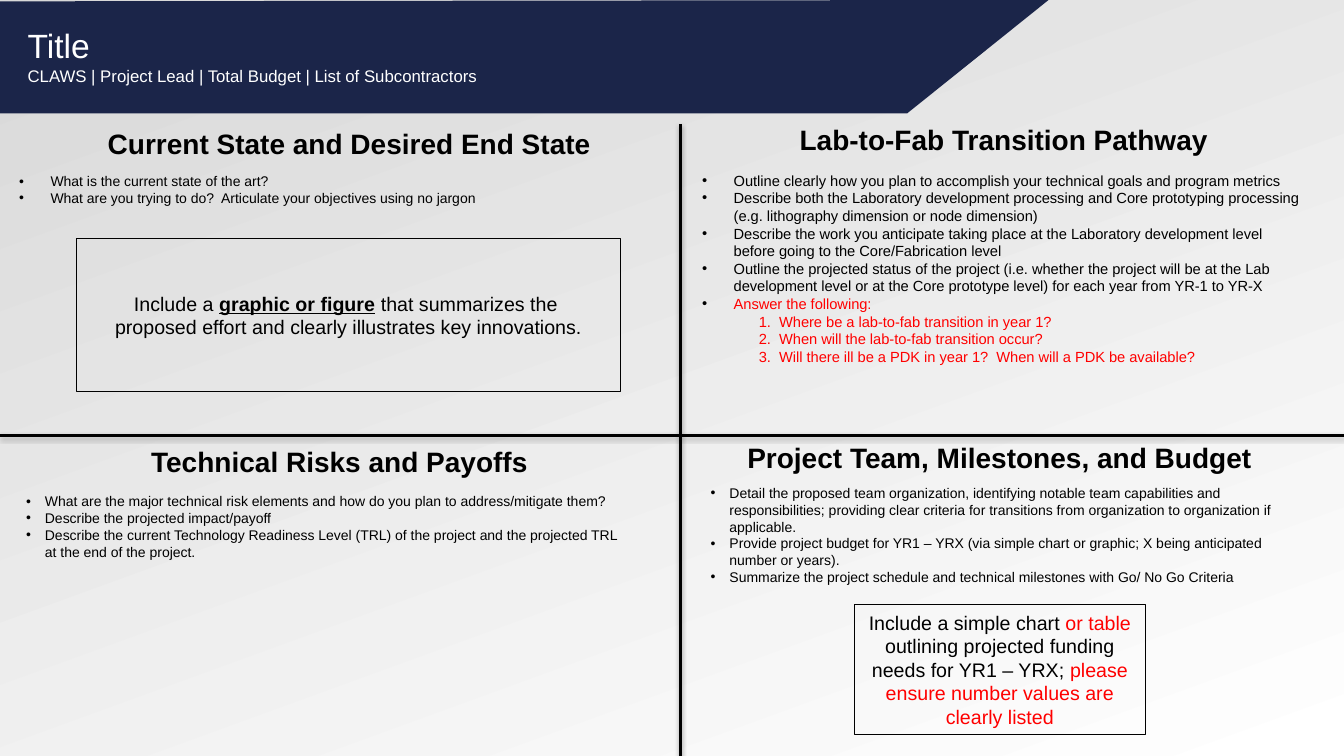
from lxml.etree import SubElement
from pptx import Presentation
from pptx.dml.color import RGBColor
from pptx.enum.shapes import MSO_CONNECTOR, MSO_SHAPE
from pptx.enum.text import MSO_ANCHOR, MSO_AUTO_SIZE, PP_ALIGN
from pptx.oxml.ns import qn
from pptx.util import Pt

BLACK, WHITE, RED, NAVY = "000000", "FFFFFF", "FF0000", "1B2549"
WIDE, HIGH, MID, CROSS, TOP = 960, 540, 486, 311, 88.5


def color(code):
    """Turn a hex string into a colour."""
    return RGBColor.from_string(code)


def node(base, tag, **attrs):
    """Add a drawing element with its attributes."""
    return SubElement(base, qn("a:" + tag), attrs)


def add_run(para, text, size, code=BLACK, bold=False, line=False):
    """Add one styled run to a paragraph."""
    run = para.add_run()
    run.text = text
    font = run.font
    font.name, font.size = "Arial", Pt(size)
    font.bold, font.underline = bold, line
    font.color.rgb = color(code)


def next_para(frame, first, align=PP_ALIGN.LEFT):
    """Give the first or a further paragraph of a frame."""
    para = frame.paragraphs[0] if first else frame.add_paragraph()
    para.alignment = align
    return para


def text_box(slide, box):
    """Add a wrapping text box and give its frame."""
    frame = slide.shapes.add_textbox(*map(Pt, box)).text_frame
    frame.word_wrap = True
    return frame


def backdrop(slide):
    """Fill the slide with a soft grey gradient."""
    fill = slide.background.fill
    fill.gradient()
    fill.gradient_angle = 110
    for stop, code, place in zip(fill.gradient_stops, (WHITE, "D8D8D8"), (0, 1)):
        stop.color.rgb = color(code)
        stop.position = place


def banner(slide, box, lines):
    """Draw the slanted banner and set the title on it."""
    left, top, width, height = box
    form = slide.shapes.build_freeform(Pt(left + width), Pt(top))
    form.add_line_segments([
        (Pt(left + width - 101), Pt(top + height)),
        (Pt(left), Pt(top + height)),
        (Pt(left), Pt(top + 1)),
    ], close=True)
    shape = form.convert_to_shape()
    shape.shadow.inherit = False
    shape.fill.solid()
    shape.fill.fore_color.rgb = color(NAVY)
    shape.line.fill.background()
    title = slide.shapes.title
    title.element.addprevious(shape.element)
    title.left, title.top = Pt(left + 12.5), Pt(top + 14.5)
    title.width, title.height = Pt(664), Pt(51)
    frame = title.text_frame
    frame.auto_size = MSO_AUTO_SIZE.NONE
    frame.vertical_anchor = MSO_ANCHOR.TOP
    for rank, (text, size) in enumerate(lines):
        add_run(next_para(frame, rank == 0), text, size, WHITE)


def rule(slide, start, end):
    """Draw a black dividing line with a soft shadow."""
    line = slide.shapes.add_connector(MSO_CONNECTOR.STRAIGHT, *map(Pt, start + end))
    line.line.color.rgb = color(BLACK)
    line.line.width = Pt(2)
    effects = node(line.element.spPr, "effectLst")
    shade = node(effects, "outerShdw", blurRad=str(Pt(3.1)), dist=str(Pt(1.6)),
                 dir="5400000", rotWithShape="0")
    node(node(shade, "srgbClr", val=BLACK), "alpha", val="38000")


def bullet(para, indent):
    """Give a paragraph a black hanging bullet."""
    props = para._p.get_or_add_pPr()
    props.set("marL", str(Pt(indent)))
    props.set("indent", str(-Pt(indent)))
    node(node(props, "buClr"), "srgbClr", val=BLACK)
    node(props, "buFont", typeface="Arial")
    node(props, "buChar", char="•")


def panel(slide, box, head, title, body, size, indent, items, steps=()):
    """Fill a quarter with a heading, bullets and red steps."""
    left, top = box
    x, y, width = head
    frame = text_box(slide, (left + x, top + y, width, 31.5))
    add_run(next_para(frame, True, PP_ALIGN.CENTER), title, 20, bold=True)
    x, y, width, height = body
    frame = text_box(slide, (left + x, top + y, width, height))
    for rank, item in enumerate(items):
        para = next_para(frame, rank == 0)
        bullet(para, indent)
        add_run(para, item, size, RED if steps and item == items[-1] else BLACK)
    for step in steps:
        para = next_para(frame, False)
        para.level = 1
        props = para._p.get_or_add_pPr()
        props.set("marL", str(Pt(40.5)))
        props.set("indent", "0")
        add_run(para, step, size, RED)


def callout(slide, box, paras):
    """Draw an outlined box with centred text."""
    shape = slide.shapes.add_shape(MSO_SHAPE.RECTANGLE, *map(Pt, box))
    shape.shadow.inherit = False
    shape.fill.background()
    shape.line.color.rgb = color(BLACK)
    shape.line.width = Pt(0.75)
    frame = shape.text_frame
    frame.word_wrap = True
    frame.vertical_anchor = MSO_ANCHOR.MIDDLE
    for rank, runs in enumerate(paras):
        para = next_para(frame, rank == 0, PP_ALIGN.CENTER)
        for text, code, strong in runs:
            add_run(para, text, 14, code, strong, strong)


def main():
    """Build the slide and save it."""
    deck = Presentation()
    deck.slide_width, deck.slide_height = Pt(WIDE), Pt(HIGH)
    slide = deck.slides.add_slide(deck.slide_layouts[5])
    backdrop(slide)
    banner(slide, (0, 0, 749, 81), [
        ("Title", 24),
        ("CLAWS | Project Lead | Total Budget | List of Subcontractors", 12),
    ])
    rule(slide, (MID, TOP), (MID, HIGH))
    rule(slide, (0, CROSS), (WIDE, CROSS))
    panel(slide, (0, TOP), (34, -1.5, 431), "Current State and Desired End State",
          (6.5, 31.5, 461.5, 44), 10, 22.5, [
              "What is the current state of the art?",
              "What are you trying to do?  Articulate your objectives using no jargon",
          ])
    panel(slide, (MID, TOP), (13.5, -4.5, 435), "Lab-to-Fab Transition Pathway",
          (8.5, 30.5, 446.5, 147), 10.5, 22.5, [
              "Outline clearly how you plan to accomplish your technical goals and program metrics",
              "Describe both the Laboratory development processing and Core prototyping processing "
              "(e.g. lithography dimension or node dimension)",
              "Describe the work you anticipate taking place at the Laboratory development level "
              "before going to the Core/Fabrication level",
              "Outline the projected status of the project (i.e. whether the project will be at the Lab "
              "development level or at the Core prototype level) for each year from YR-1 to YR-X",
              "Answer the following:",
          ], [
              "1.  Where be a lab-to-fab transition in year 1?",
              "2.  When will the lab-to-fab transition occur?",
              "3.  Will there ill be a PDK in year 1?  When will a PDK be available?",
          ])
    panel(slide, (0, CROSS), (20, 3, 445), "Technical Risks and Payoffs",
          (11.5, 37.5, 439, 68), 10, 13.5, [
              "What are the major technical risk elements and how do you plan to address/mitigate them?",
              "Describe the projected impact/payoff",
              "Describe the current Technology Readiness Level (TRL) of the project and the projected "
              "TRL at the end of the project.",
          ])
    panel(slide, (MID, CROSS), (13.5, 0, 429), "Project Team, Milestones, and Budget",
          (14.5, 31.5, 443.5, 104), 10, 13.5, [
              "Detail the proposed team organization, identifying notable team capabilities and "
              "responsibilities; providing clear criteria for transitions from organization to "
              "organization if applicable.",
              "Provide project budget for YR1 – YRX (via simple chart or graphic; X being anticipated "
              "number or years).",
              "Summarize the project schedule and technical milestones with Go/ No Go Criteria",
          ])
    callout(slide, (54.5, 170.5, 389, 109), [
        [("Include a ", BLACK, False), ("graphic or figure", BLACK, True),
         (" that summarizes the ", BLACK, False)],
        [("proposed effort and clearly illustrates key innovations.", BLACK, False)],
    ])
    callout(slide, (610.5, 432, 207.5, 92.5), [[
        ("Include a simple chart ", BLACK, False), ("or table ", RED, False),
        ("outlining projected funding needs for YR1 – YRX; ", BLACK, False),
        ("please ensure number values are clearly listed", RED, False),
    ]])
    deck.save("out.pptx")


if __name__ == "__main__":
    main()
